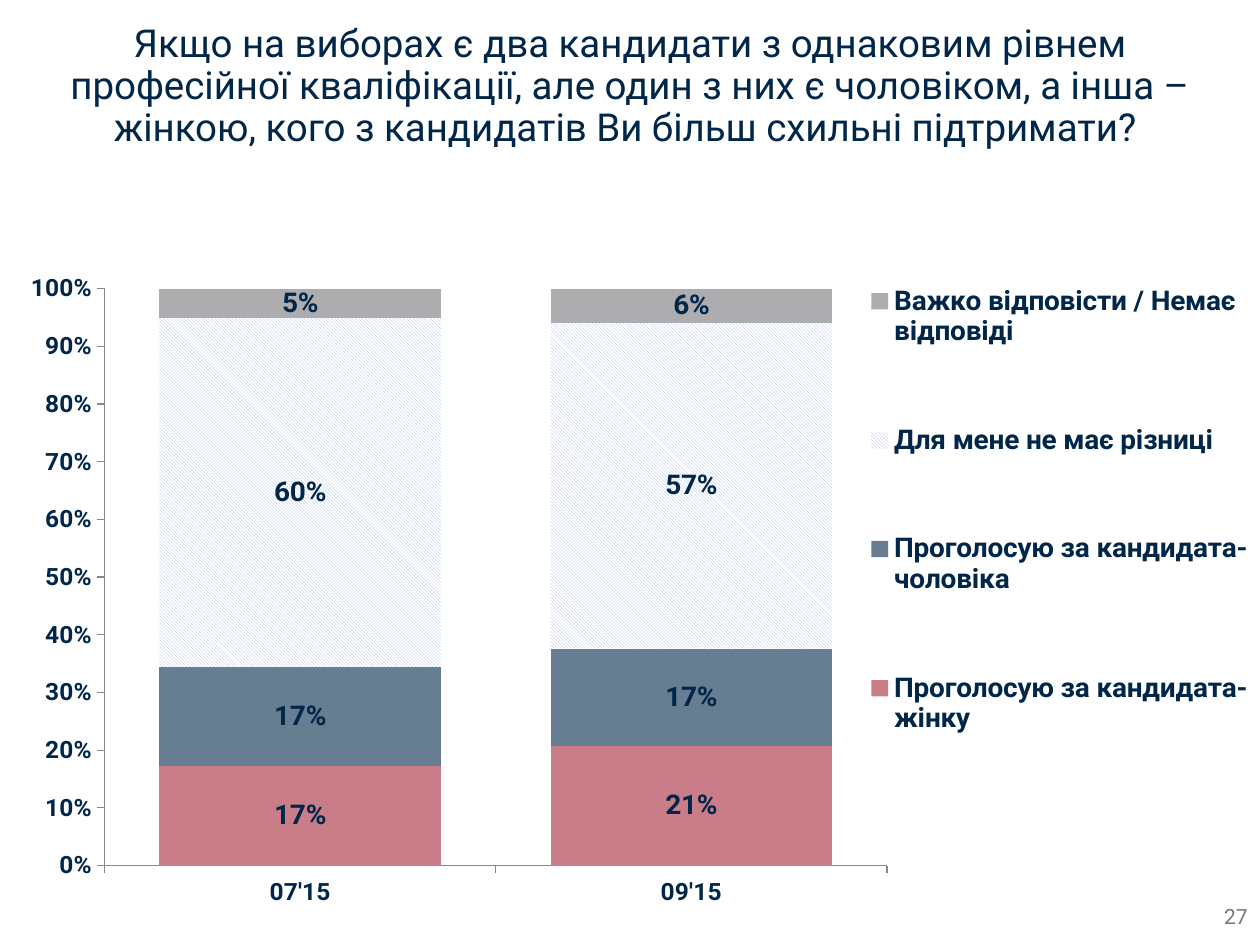
from lxml import etree
from pptx import Presentation
from pptx.chart.data import CategoryChartData
from pptx.dml.color import RGBColor
from pptx.enum.chart import XL_CHART_TYPE as ChartType, XL_LABEL_POSITION as LabelPos
from pptx.enum.chart import XL_LEGEND_POSITION as LegendPos, XL_TICK_MARK as Tick
from pptx.enum.dml import MSO_PATTERN as Pattern
from pptx.enum.text import MSO_ANCHOR as Anchor, PP_ALIGN as Align
from pptx.oxml.ns import qn
from pptx.util import Pt

EMU_PER_PX = 914400 // 126
NAVY, GREY, AXIS_GREY = "002649", "77787B", "868686"
QUESTION = ("Якщо на виборах є два кандидати з однаковим рівнем професійної "
            "кваліфікації, але один з них є чоловіком, а інша – жінкою, "
            "кого з кандидатів Ви більш схильні підтримати? ")
WAVES = ["07'15", "09'15"]
ANSWERS = [
    ("Проголосую за кандидата-жiнку", (0.17, 0.21), "C87D88"),
    ("Проголосую за кандидата-чоловiка", (0.17, 0.17), "667D92"),
    ("Для мене не має рiзницi", (0.60, 0.57), ("A2B7E2", "FFFFFF")),
    ("Важко вiдповiсти / Немає вiдповiдi", (0.05, 0.06), "ADADB0"),
]


def px(length):
    return length * EMU_PER_PX


def rgb(code):
    return RGBColor.from_string(code)


def set_font(font, size, color=NAVY, bold=False):
    font.name, font.size, font.bold = "Roboto", Pt(size), bold
    font.color.rgb = rgb(color)


def write(frame, text, align=Align.LEFT, spacing=1.0, **style):
    paragraph = frame.paragraphs[0]
    paragraph.alignment, paragraph.line_spacing = align, spacing
    run = paragraph.add_run()
    run.text = text
    set_font(run.font, **style)


def manual_layout(x, y, w, h, inner=False):
    layout = etree.Element(qn("c:layout"))
    manual = etree.SubElement(layout, qn("c:manualLayout"))
    settings = [("layoutTarget", "inner")] if inner else []
    settings += [("xMode", "edge"), ("yMode", "edge"), ("x", x), ("y", y), ("w", w), ("h", h)]
    for tag, value in settings:
        etree.SubElement(manual, qn(f"c:{tag}")).set("val", str(value))
    return layout


class SurveySlide:
    """Slide of a survey report, with its text and chart style."""

    def __init__(self, deck):
        self.slide = deck.slides.add_slide(deck.slide_layouts[6])

    def text(self, box, text, **style):
        frame = self.slide.shapes.add_textbox(*map(px, box)).text_frame
        frame.word_wrap = True
        frame.vertical_anchor = Anchor.MIDDLE
        write(frame, text, **style)

    def stacked_chart(self, box, waves, answers):
        data = CategoryChartData(number_format="0%")
        data.categories = waves
        for name, shares, _ in answers:
            data.add_series(name, shares)
        chart = self.slide.shapes.add_chart(
            ChartType.COLUMN_STACKED_100, *map(px, box), data).chart
        set_font(chart.font, 16, bold=True)
        chart.has_title = False
        plot = chart.plots[0]
        plot.gap_width, plot.overlap, plot.vary_by_categories = 39, 100, False
        for series, (_, _, color) in zip(plot.series, answers):
            self.style_series(series, color)
        for axis in (chart.category_axis, chart.value_axis):
            self.style_axis(axis)
        value_axis = chart.value_axis
        value_axis.minimum_scale, value_axis.maximum_scale, value_axis.major_unit = 0, 1, 0.1
        value_axis.tick_labels.number_format = "0%"
        value_axis.tick_labels.number_format_is_linked = False
        self.place_legend(chart)
        plot_area = chart._chartSpace.chart.plotArea
        for layout in plot_area.findall(qn("c:layout")):
            plot_area.remove(layout)
        plot_area.insert(0, manual_layout(0.083, 0.243, 0.621, 0.735, inner=True))

    def style_series(self, series, color):
        fill = series.format.fill
        if isinstance(color, tuple):
            fill.patterned()
            fill.pattern = Pattern.LIGHT_DOWNWARD_DIAGONAL
            fill.fore_color.rgb, fill.back_color.rgb = map(rgb, color)
        else:
            fill.solid()
            fill.fore_color.rgb = rgb(color)
        labels = series.data_labels
        labels.show_value, labels.position = True, LabelPos.CENTER
        labels.number_format, labels.number_format_is_linked = "0%", False
        set_font(labels.font, 16, bold=True)

    def style_axis(self, axis):
        axis.has_major_gridlines = False
        axis.major_tick_mark, axis.minor_tick_mark = Tick.OUTSIDE, Tick.NONE
        axis.format.line.color.rgb = rgb(AXIS_GREY)
        axis.format.line.width = Pt(0.75)
        set_font(axis.tick_labels.font, 14, bold=True)

    def place_legend(self, chart):
        chart.has_legend = True
        legend = chart.legend
        legend.position, legend.include_in_layout = LegendPos.RIGHT, False
        set_font(legend.font, 16, bold=True)
        element = legend._element
        for layout in element.findall(qn("c:layout")):
            element.remove(layout)
        element.find(qn("c:overlay")).addprevious(manual_layout(0.69, 0.14, 0.31, 0.77))


def main():
    deck = Presentation()
    deck.slide_width, deck.slide_height = px(1260), px(945)
    survey = SurveySlide(deck)
    survey.text((39, 66, 1182, 42), QUESTION, align=Align.CENTER, spacing=0.9, size=22)
    survey.text((976, 891, 284, 50), "27", align=Align.RIGHT, size=12, color=GREY)
    survey.stacked_chart((0, 98, 1260, 809), WAVES, ANSWERS)
    deck.save("out.pptx")


if __name__ == "__main__":
    main()
